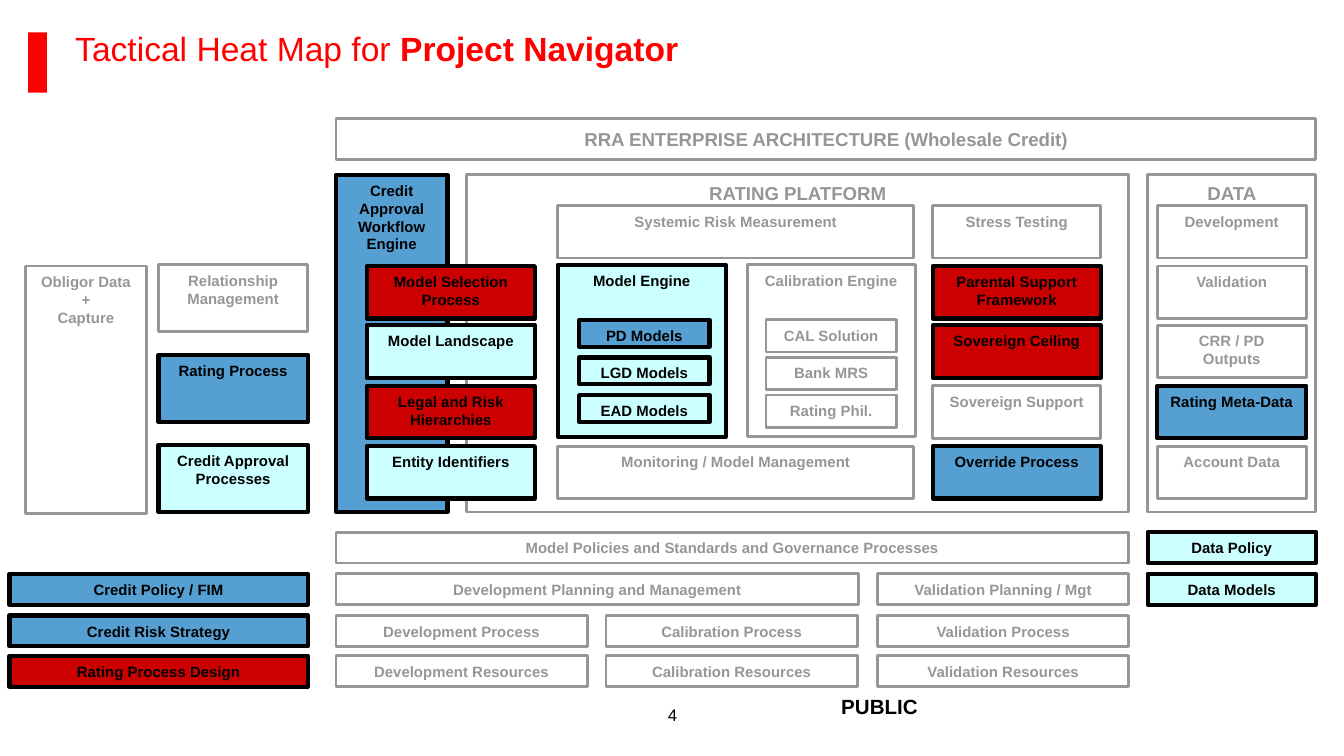
from pptx import Presentation
from pptx.dml.color import RGBColor
from pptx.enum import shapes, text
from pptx.util import Inches, Pt

WHITE = RGBColor(0xFF, 0xFF, 0xFF)
BLACK = RGBColor(0x00, 0x00, 0x00)
GREY = RGBColor(0x96, 0x96, 0x96)
BRIGHT_RED = RGBColor(0xFF, 0x00, 0x00)
RED = RGBColor(0xCC, 0x00, 0x00)
BLUE = RGBColor(0x55, 0x9F, 0xD3)
CYAN = RGBColor(0xCC, 0xFF, 0xFF)

TOP, MIDDLE = text.MSO_ANCHOR.TOP, text.MSO_ANCHOR.MIDDLE
LEFT, CENTER = text.PP_ALIGN.LEFT, text.PP_ALIGN.CENTER

PLATFORM_ROWS = [1.53, 1.98, 2.42, 2.87, 3.32]
PLATFORM_HEIGHT = 0.39
BAND_ROWS = [3.96, 4.27, 4.58, 4.88]
BAND_HEIGHT = 0.23
ENGINE_ROWS = [2.38, 2.66, 2.94]

# left, top, width, height, label, heat (None = not affected)
CONTAINERS = [
    (3.47, 1.3, 4.93, 2.51, "RATING PLATFORM", None),
    (8.54, 1.3, 1.25, 2.51, "DATA", None),
]
BLOCKS = [
    (2.5, 1.3, 0.83, 2.51, "Credit Approval Workflow Engine", BLUE),
    (0.19, 1.98, 0.9, 1.84, "Obligor Data +\nCapture", None),
    (1.18, 1.97, 1.11, 0.5, "Relationship Management", None),
    (1.18, 2.64, 1.11, 0.5, "Rating Process", BLUE),
    (1.18, 3.31, 1.11, 0.5, "Credit Approval Processes", CYAN),
    (4.15, 1.97, 1.25, 1.28, "Model Engine", CYAN),
    (5.56, 1.97, 1.25, 1.28, "Calibration Engine", None),
    (4.15, 1.53, 2.65, 0.39, "Systemic Risk Measurement", None),
    (4.15, 3.32, 2.65, 0.39, "Monitoring / Model Management", None),
]

# left, width, tops, height, [(label, heat), ...]
COLUMNS = [
    (2.73, 1.25, PLATFORM_ROWS[1:], PLATFORM_HEIGHT, [
        ("Model Selection Process", RED), ("Model Landscape", CYAN),
        ("Legal and Risk Hierarchies", RED), ("Entity Identifiers", CYAN)]),
    (6.94, 1.25, PLATFORM_ROWS, PLATFORM_HEIGHT, [
        ("Stress Testing", None), ("Parental Support Framework", RED),
        ("Sovereign Ceiling", RED), ("Sovereign Support", None),
        ("Override Process", BLUE)]),
    (8.61, 1.11, PLATFORM_ROWS, PLATFORM_HEIGHT, [
        ("Development", None), ("Validation", None), ("CRR / PD Outputs", None),
        ("Rating Meta-Data", BLUE), ("Account Data", None)]),
    (4.31, 0.97, ENGINE_ROWS, 0.2, [
        ("PD Models", BLUE), ("LGD Models", CYAN), ("EAD Models", CYAN)]),
    (5.7, 0.97, ENGINE_ROWS, 0.24, [
        ("CAL Solution", None), ("Bank MRS", None), ("Rating Phil.", None)]),
    (0.07, 2.22, BAND_ROWS[1:], BAND_HEIGHT, [
        ("Credit Policy / FIM", BLUE), ("Credit Risk Strategy", BLUE),
        ("Rating Process Design", RED)]),
    (2.5, 5.9, BAND_ROWS[:1], BAND_HEIGHT, [
        ("Model Policies and Standards and Governance Processes", None)]),
    (2.5, 3.89, BAND_ROWS[1:2], BAND_HEIGHT, [
        ("Development Planning and Management", None)]),
    (2.5, 1.87, BAND_ROWS[2:], BAND_HEIGHT, [
        ("Development Process", None), ("Development Resources", None)]),
    (4.51, 1.87, BAND_ROWS[2:], BAND_HEIGHT, [
        ("Calibration Process", None), ("Calibration Resources", None)]),
    (6.53, 1.87, BAND_ROWS[1:], BAND_HEIGHT, [
        ("Validation Planning / Mgt", None), ("Validation Process", None),
        ("Validation Resources", None)]),
    (8.54, 1.25, BAND_ROWS[:2], BAND_HEIGHT, [
        ("Data Policy", CYAN), ("Data Models", CYAN)]),
]


def write_text(shape, paragraphs, size, color, align=CENTER, anchor=TOP,
               insets=(0.1, 0.05, 0.1, 0.05), wrap=True, line_spacing=None):
    """Fill a shape with paragraphs, each a list of (text, bold) runs."""
    frame = shape.text_frame
    frame.word_wrap = wrap
    frame.vertical_anchor = anchor
    (frame.margin_left, frame.margin_top,
     frame.margin_right, frame.margin_bottom) = map(Inches, insets)
    for index, runs in enumerate(paragraphs):
        paragraph = frame.add_paragraph() if index else frame.paragraphs[0]
        paragraph.alignment = align
        paragraph.line_spacing = line_spacing
        for content, bold in runs:
            run = paragraph.add_run()
            run.text = content
            run.font.name = "Arial"
            run.font.size = Pt(size)
            run.font.bold = bold
            run.font.color.rgb = color


def add_rectangle(slide, left, top, width, height, fill):
    shape = slide.shapes.add_shape(shapes.MSO_SHAPE.RECTANGLE, Inches(left),
                                   Inches(top), Inches(width), Inches(height))
    shape.shadow.inherit = False
    shape.fill.solid()
    shape.fill.fore_color.rgb = fill
    shape.line.fill.background()
    return shape


def add_box(slide, left, top, width, height, label, heat, size=8, anchor=TOP):
    """Add a labelled box: black outline when it has heat, else grey on white."""
    shape = add_rectangle(slide, left, top, width, height, heat or WHITE)
    color = BLACK if heat else GREY
    shape.line.color.rgb = color
    shape.line.width = Pt(2.25 if heat else 1.5)
    paragraphs = [[(line, True)] for line in label.split("\n")]
    write_text(shape, paragraphs, size, color, anchor=anchor)


def add_label(slide, left, top, width, height, runs, size, color, **text_format):
    shape = slide.shapes.add_textbox(Inches(left), Inches(top),
                                     Inches(width), Inches(height))
    write_text(shape, [runs], size, color, **text_format)


def add_column(slide, left, width, tops, height, entries):
    for top, (label, heat) in zip(tops, entries):
        add_box(slide, left, top, width, height, label, heat)


def add_title_and_footer(slide):
    add_rectangle(slide, 0.21, 0.24, 0.14, 0.45, BRIGHT_RED)
    add_label(slide, 0.56, 0.24, 8.89, 0.56,
              [("Tactical Heat Map for ", False), ("Project Navigator", True)],
              18, BRIGHT_RED, align=LEFT, insets=(0, 0, 0, 0.02), line_spacing=0.9)
    add_label(slide, 4.93, 5.24, 0.15, 0.15, [("4", False)], 9, BLACK,
              anchor=MIDDLE, insets=(0, 0, 0, 0), wrap=False)
    add_label(slide, 4.96, 5.12, 3.17, 0.39, [("PUBLIC", True)], 11, BLACK,
              insets=(0.08, 0.04, 0.08, 0.04))


def main():
    presentation = Presentation()
    presentation.slide_width = Inches(10)
    presentation.slide_height = presentation.slide_width * 9 // 16
    slide = presentation.slides.add_slide(presentation.slide_layouts[6])

    add_title_and_footer(slide)
    add_box(slide, 2.5, 0.88, 7.29, 0.31,
            "RRA ENTERPRISE ARCHITECTURE (Wholesale Credit)", None,
            size=10, anchor=MIDDLE)
    for container in CONTAINERS:
        add_box(slide, *container, size=10)
    for block in BLOCKS:
        add_box(slide, *block)
    for column in COLUMNS:
        add_column(slide, *column)

    presentation.save("out.pptx")


if __name__ == "__main__":
    main()
